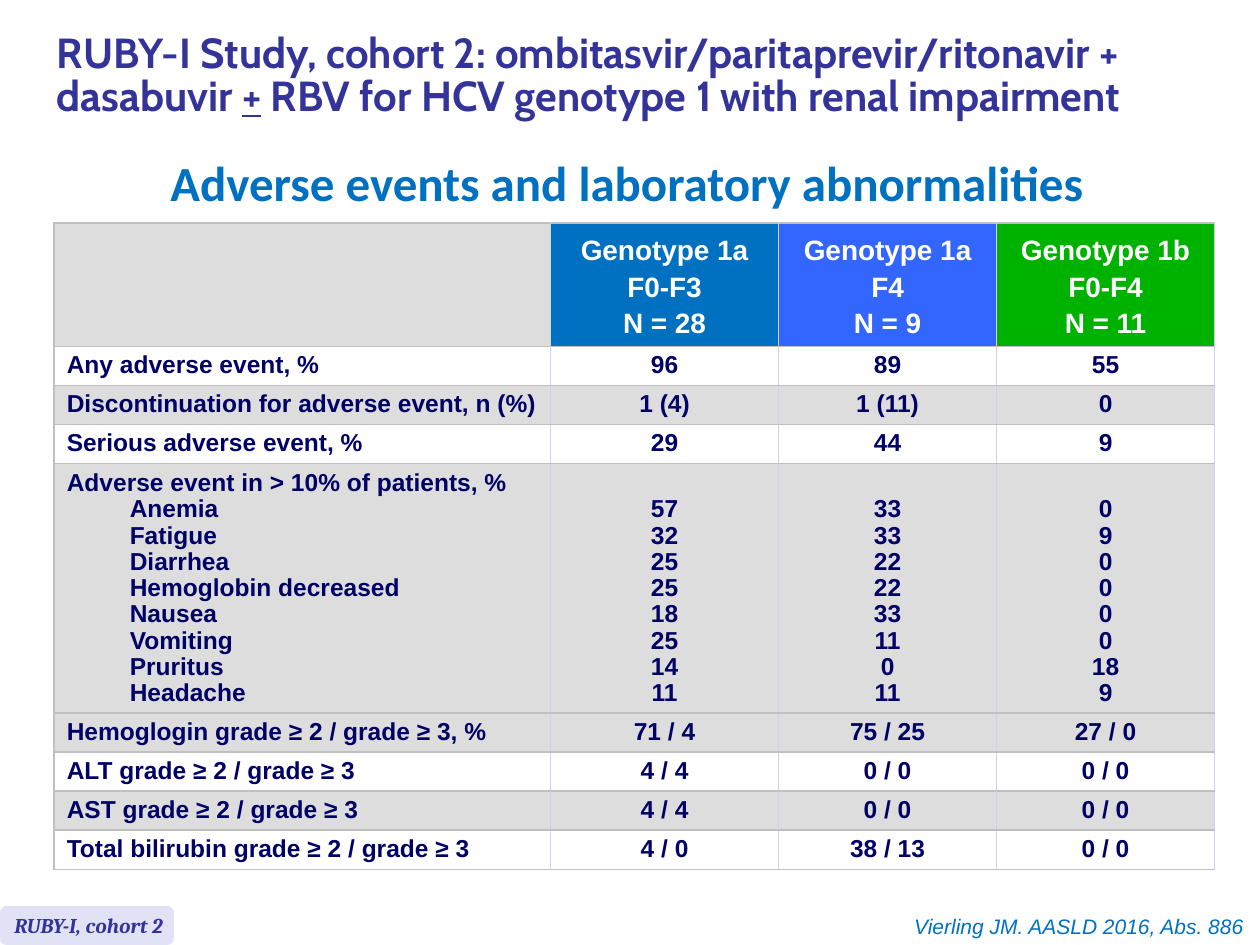
from pptx import Presentation
from pptx.dml.color import RGBColor
from pptx.enum.shapes import MSO_SHAPE
from pptx.enum.text import MSO_ANCHOR, PP_ALIGN
from pptx.oxml import parse_xml
from pptx.oxml.ns import nsdecls
from pptx.util import Inches, Pt

LEFT, CENTER, RIGHT = PP_ALIGN.LEFT, PP_ALIGN.CENTER, PP_ALIGN.RIGHT
MIDDLE, BOTTOM = MSO_ANCHOR.MIDDLE, MSO_ANCHOR.BOTTOM
ROUNDED = MSO_SHAPE.ROUNDED_RECTANGLE

WHITE = RGBColor(0xFF, 0xFF, 0xFF)
GRAY = RGBColor(0xDD, 0xDD, 0xDD)
NAVY = RGBColor(0x00, 0x00, 0x66)
INDIGO = RGBColor(0x33, 0x33, 0x99)
BLUE = RGBColor(0x00, 0x70, 0xC0)
BRIGHT_BLUE = RGBColor(0x33, 0x66, 0xFF)
GREEN = RGBColor(0x00, 0xB2, 0x00)
LAVENDER = RGBColor(0xE2, 0xE2, 0xF6)
ROW_RULE = RGBColor(0xC0, 0xC0, 0xC0)
COLUMN_RULE = RGBColor(0xD0, 0xD0, 0xF0)

COLUMN_WIDTHS = [3.94, 1.81, 1.73, 1.73]
HEADER_HEIGHT, ROW_HEIGHT, EVENTS_HEIGHT = 0.98, 0.31, 1.98
HEADER = ["", "Genotype 1a\nF0-F3\nN = 28", "Genotype 1a\nF4\nN = 9",
          "Genotype 1b\nF0-F4\nN = 11"]
HEADER_FILLS = [GRAY, BLUE, BRIGHT_BLUE, GREEN]

COMMON_EVENTS = [
    ("Anemia", 57, 33, 0),
    ("Fatigue", 32, 33, 9),
    ("Diarrhea", 25, 22, 0),
    ("Hemoglobin decreased", 25, 22, 0),
    ("Nausea", 18, 33, 0),
    ("Vomiting", 25, 11, 0),
    ("Pruritus", 14, 0, 18),
    ("Headache", 11, 11, 9),
]
EVENT_NAMES, *EVENT_RATES = [
    "\n".join(str(value) for value in column) for column in zip(*COMMON_EVENTS)]
EVENTS_ROW = ["Adverse event in > 10% of patients, %\n" + EVENT_NAMES, *EVENT_RATES]

BODY = [
    (WHITE, ["Any adverse event, %", "96", "89", "55"]),
    (GRAY, ["Discontinuation for adverse event, n (%)", "1 (4)", "1 (11)", "0"]),
    (WHITE, ["Serious adverse event, %", "29", "44", "9"]),
    (GRAY, EVENTS_ROW),
    (GRAY, ["Hemoglogin grade ≥ 2 / grade ≥ 3, %", "71 / 4", "75 / 25", "27 / 0"]),
    (WHITE, ["ALT grade ≥ 2 / grade ≥ 3", "4 / 4", "0 / 0", "0 / 0"]),
    (GRAY, ["AST grade ≥ 2 / grade ≥ 3", "4 / 4", "0 / 0", "0 / 0"]),
    (WHITE, ["Total bilirubin grade ≥ 2 / grade ≥ 3", "4 / 0", "38 / 13", "0 / 0"]),
]


class StudySlide:
    def __init__(self, deck):
        self.slide = deck.slides.add_slide(deck.slide_layouts[5])

    def format_text(self, frame, font, size, color, bold=False, italic=False,
                    align=LEFT, spacing=None):
        for para in frame.paragraphs:
            para.alignment = align
            para.space_before = Pt(0)
            para.line_spacing = spacing
            for span in para.runs:
                span.font.name = font
                span.font.size = Pt(size)
                span.font.bold = bold
                span.font.italic = italic
                span.font.color.rgb = color

    def title(self, before, underlined, after):
        box = self.slide.shapes.title
        box.left, box.top = Inches(0.35), Inches(0.08)
        box.width, box.height = Inches(9.46), Inches(1.07)
        frame = box.text_frame
        frame.vertical_anchor = MIDDLE
        para = frame.paragraphs[0]
        for text in (before, underlined, after):
            span = para.add_run()
            span.text = text
            span.font.underline = text == underlined
        self.format_text(frame, "Cabin", 24, INDIGO, bold=True, spacing=0.85)

    def text(self, text, left, top, width, height, wrap=True, **style):
        box = self.slide.shapes.add_textbox(
            Inches(left), Inches(top), Inches(width), Inches(height))
        box.text_frame.word_wrap = wrap
        box.text_frame.text = text
        self.format_text(box.text_frame, **style)

    def tag(self, text, left, top, width, height, **style):
        shape = self.slide.shapes.add_shape(
            ROUNDED, Inches(left), Inches(top), Inches(width), Inches(height))
        shape.shadow.inherit = False
        shape.fill.solid()
        shape.fill.fore_color.rgb = LAVENDER
        shape.line.fill.background()
        frame = shape.text_frame
        frame.word_wrap = False
        frame.vertical_anchor = MIDDLE
        frame.text = text
        self.format_text(frame, **style)

    def cell(self, cell, text, fill, first_column, **style):
        left_rule = ROW_RULE if first_column else COLUMN_RULE
        rules = {"lnL": left_rule, "lnR": COLUMN_RULE, "lnT": ROW_RULE, "lnB": ROW_RULE}
        properties = cell._tc.get_or_add_tcPr()
        for side, color in rules.items():
            properties.append(parse_xml(
                f'<a:{side} {nsdecls("a")} w="12700"><a:solidFill>'
                f'<a:srgbClr val="{color}"/></a:solidFill></a:{side}>'))
        cell.fill.solid()
        cell.fill.fore_color.rgb = fill
        cell.vertical_anchor = MIDDLE
        cell.text_frame.text = text
        self.format_text(cell.text_frame, font="Arial", bold=True, **style)

    def table(self, left, top):
        heights = [HEADER_HEIGHT] + [
            EVENTS_HEIGHT if texts is EVENTS_ROW else ROW_HEIGHT for _, texts in BODY]
        frame = self.slide.shapes.add_table(
            len(heights), len(COLUMN_WIDTHS), Inches(left), Inches(top),
            Inches(sum(COLUMN_WIDTHS)), Inches(sum(heights)))
        table = frame.table
        table.first_row = table.horz_banding = False
        for column, width in zip(table.columns, COLUMN_WIDTHS):
            column.width = Inches(width)
        for row, height in zip(table.rows, heights):
            row.height = Inches(height)
        for column, (text, fill) in enumerate(zip(HEADER, HEADER_FILLS)):
            self.cell(table.cell(0, column), text, fill, column == 0,
                      size=16, color=WHITE, align=CENTER, spacing=Pt(21))
        for row, (fill, texts) in enumerate(BODY, start=1):
            for column, text in enumerate(texts):
                cell = table.cell(row, column)
                self.cell(cell, text, fill, column == 0, size=14, color=NAVY,
                          align=CENTER if column else LEFT, spacing=Pt(15))
                if texts is EVENTS_ROW:
                    cell.vertical_anchor = BOTTOM
            for para in table.cell(row, 0).text_frame.paragraphs[1:]:
                para.level = 1
                properties = para._p.get_or_add_pPr()
                properties.set("marL", str(Inches(0.5)))
                properties.set("indent", "0")


def main():
    deck = Presentation()
    deck.slide_width, deck.slide_height = Inches(10), Inches(7.5)
    page = StudySlide(deck)
    page.title("RUBY-I Study, cohort 2: ombitasvir/paritaprevir/ritonavir + dasabuvir ",
               "+", " RBV for HCV genotype 1 with renal impairment")
    page.text("Adverse events and laboratory abnormalities", 1.06, 1.42, 7.83, 0.36,
              font="Calibri", size=28, color=BLUE, bold=True, align=CENTER,
              spacing=Pt(15.2))
    page.table(0.43, 1.77)
    page.text("Vierling JM. AASLD 2016, Abs. 886", 7.09, 7.2, 2.88, 0.3, wrap=False,
              font="Arial", size=12, color=BLUE, italic=True, align=RIGHT)
    page.tag("RUBY-I, cohort 2", 0, 7.19, 1.38, 0.31,
             font="Cambria", size=12, color=INDIGO, bold=True, italic=True)
    deck.save("out.pptx")


if __name__ == "__main__":
    main()
